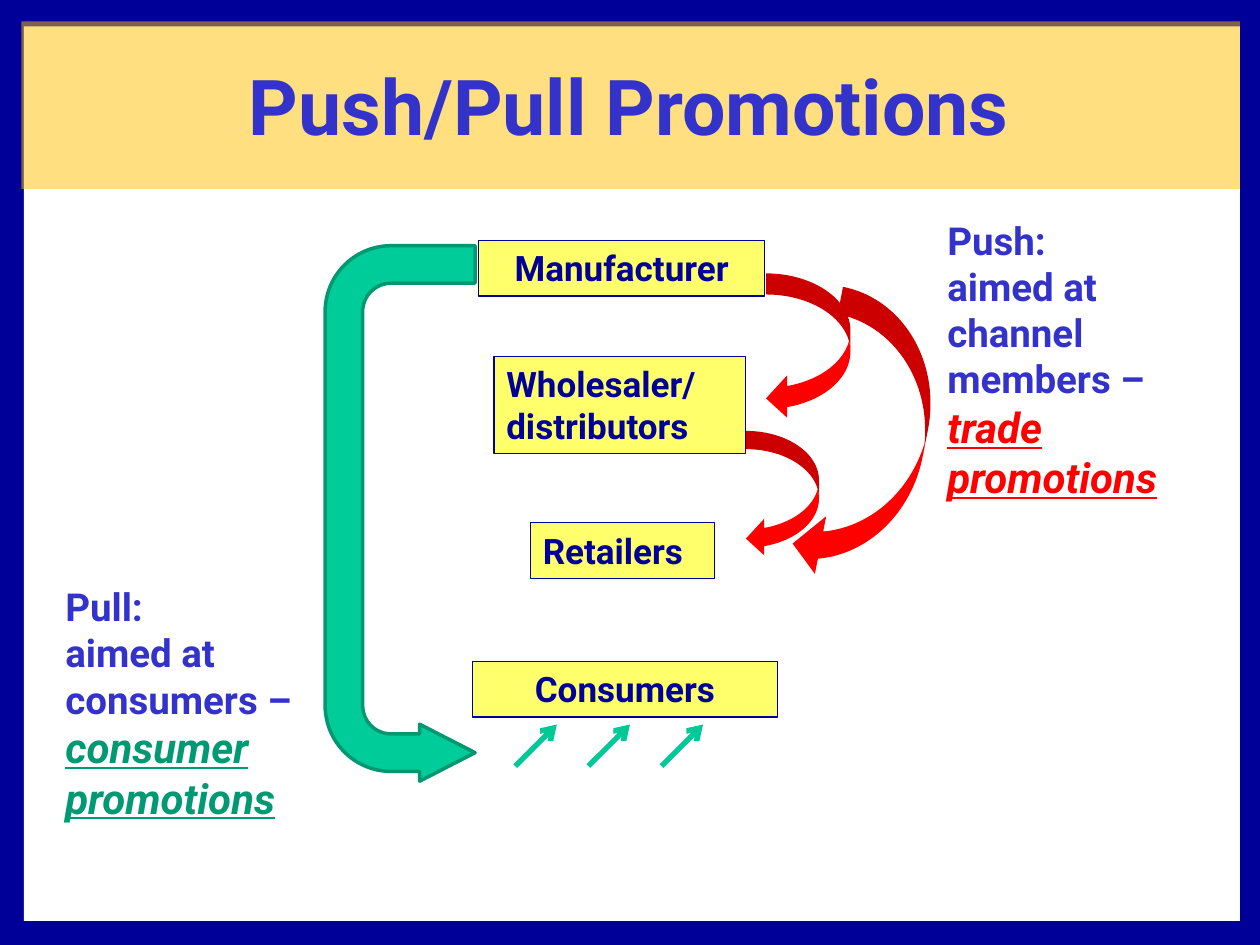
from lxml import etree
from pptx import Presentation
from pptx import util as u
from pptx.dml.color import RGBColor
from pptx.enum import shapes, text
from pptx.oxml.ns import qn

COLORS = {
    "navy": "000099", "white": "FFFFFF", "gold": "FFC000", "yellow": "FFFF00",
    "blue": "3333CC", "red": "FF0000", "teal": "00CC99", "teal_edge": "009771",
    "teal_text": "009973", "teal_line": "00C896",
}
SHAPE = shapes.MSO_SHAPE
LEFT, CENTER = text.PP_ALIGN.LEFT, text.PP_ALIGN.CENTER


def color(name):
    return RGBColor.from_string(COLORS[name])


class SlideBuilder:
    def __init__(self, slide, font="Roboto"):
        self.slide = slide
        self.font = font

    def shape(self, kind, at, fill, opacity=100, line=None, width=0.75,
              rotation=0, flip=False, adjustments=()):
        shape = self.slide.shapes.add_shape(kind, *map(u.Inches, at))
        shape.shadow.inherit = False
        shape.fill.solid()
        shape.fill.fore_color.rgb = color(fill)
        if opacity < 100:
            hue = shape.element.spPr.find(qn("a:solidFill"))[0]
            etree.SubElement(hue, qn("a:alpha"), val=str(opacity * 1000))
        if line:
            shape.line.color.rgb = color(line)
            shape.line.width = u.Pt(width)
        else:
            shape.line.fill.background()
        shape.rotation = rotation
        if flip:
            shape.element.spPr.find(qn("a:xfrm")).set("flipH", "1")
        for index, value in enumerate(adjustments):
            shape.adjustments[index] = value
        return shape

    def style(self, span, size, ink, emphasis=False):
        span.font.name = self.font
        span.font.size = u.Pt(size)
        span.font.bold = True
        span.font.color.rgb = color(ink)
        if emphasis:
            span.font.italic = span.font.underline = True

    def title(self, words, at):
        box = self.slide.shapes.add_textbox(*map(u.Inches, at))
        frame = box.text_frame
        frame.word_wrap = True
        frame.vertical_anchor = text.MSO_ANCHOR.MIDDLE
        frame.text = words
        frame.paragraphs[0].alignment = CENTER
        self.style(frame.paragraphs[0].runs[0], 44, "blue")

    def level(self, words, at, align=CENTER, wrap=True):
        """Add one labelled box of the distribution channel."""
        box = self.shape(SHAPE.RECTANGLE, at, "yellow", 58, "navy")
        frame = box.text_frame
        frame.word_wrap = wrap
        frame.auto_size = text.MSO_AUTO_SIZE.SHAPE_TO_FIT_TEXT
        frame.vertical_anchor = text.MSO_ANCHOR.TOP
        frame.text = words
        frame.paragraphs[0].alignment = align
        self.style(frame.paragraphs[0].runs[0], 20, "navy")

    def strategy(self, name, target, method, ink, at):
        """Add a strategy note whose closing words are emphasised."""
        box = self.slide.shapes.add_textbox(*map(u.Inches, at))
        frame = box.text_frame
        frame.word_wrap = True
        frame.auto_size = text.MSO_AUTO_SIZE.SHAPE_TO_FIT_TEXT
        frame.text = f"{name}\n{target}"
        for para in frame.paragraphs:
            self.style(para.runs[0], 22, "blue")
        span = frame.paragraphs[1].add_run()
        span.text = method
        self.style(span, 24, ink, emphasis=True)

    def arrow(self, start, end):
        line = self.slide.shapes.add_connector(
            shapes.MSO_CONNECTOR.STRAIGHT, *map(u.Inches, start + end))
        line.line.color.rgb = color("teal_line")
        line.line.width = u.Pt(3)
        etree.SubElement(line.line._get_or_add_ln(), qn("a:tailEnd"), type="arrow")
        etree.SubElement(line.element.spPr, qn("a:effectLst"))


def main():
    deck = Presentation()
    deck.slide_width, deck.slide_height = u.Inches(10), u.Inches(7.5)
    page = SlideBuilder(deck.slides.add_slide(deck.slide_layouts[6]))

    page.shape(SHAPE.RECTANGLE, (0, 0, 10, 7.5), "navy")
    page.shape(SHAPE.RECTANGLE, (0.19, 0.21, 9.65, 7.1), "white")
    page.shape(SHAPE.RECTANGLE, (0.17, 0.17, 9.67, 1.33), "gold", 50)
    page.shape(SHAPE.U_TURN_ARROW, (1.05, 3.48, 4.25, 1.19), "teal",
               line="teal_edge", width=2, rotation=270, flip=True,
               adjustments=(0.25, 0.19, 0.37, 0.44, 1))
    page.title("Push/Pull Promotions", (0.33, 0.17, 9.33, 1.33))

    page.strategy("Pull:", "aimed at consumers – ", "consumer promotions",
                  "teal_text", (0.42, 4.58, 2.25, 2.02))
    page.strategy("Push:", "aimed at channel members – ", "trade promotions",
                  "red", (7.42, 1.67, 2.37, 2.39))

    page.level("Manufacturer", (3.8, 1.91, 2.27, 0.44))
    page.level("Wholesaler/ distributors", (3.92, 2.83, 2, 0.77), LEFT)
    page.level("Consumers", (3.75, 5.25, 2.42, 0.44))
    page.level("Retailers", (4.21, 4.15, 1.46, 0.44), LEFT, wrap=False)

    for at, rotation, adjustments in (
        ((6.08, 2.17, 0.67, 1.16), 0, ()),
        ((6.46, 2.34, 0.88, 2.31), 11.1, (0.25, 0.53, 0.25)),
        ((5.92, 3.42, 0.58, 1), 0, ()),
    ):
        page.shape(SHAPE.CURVED_LEFT_ARROW, at, "red",
                   rotation=rotation, adjustments=adjustments)

    for index in range(3):
        left = 4.09 + 0.58 * index
        page.arrow((left, 6.08), (left + 0.33, 5.75))

    deck.save("out.pptx")


if __name__ == "__main__":
    main()
